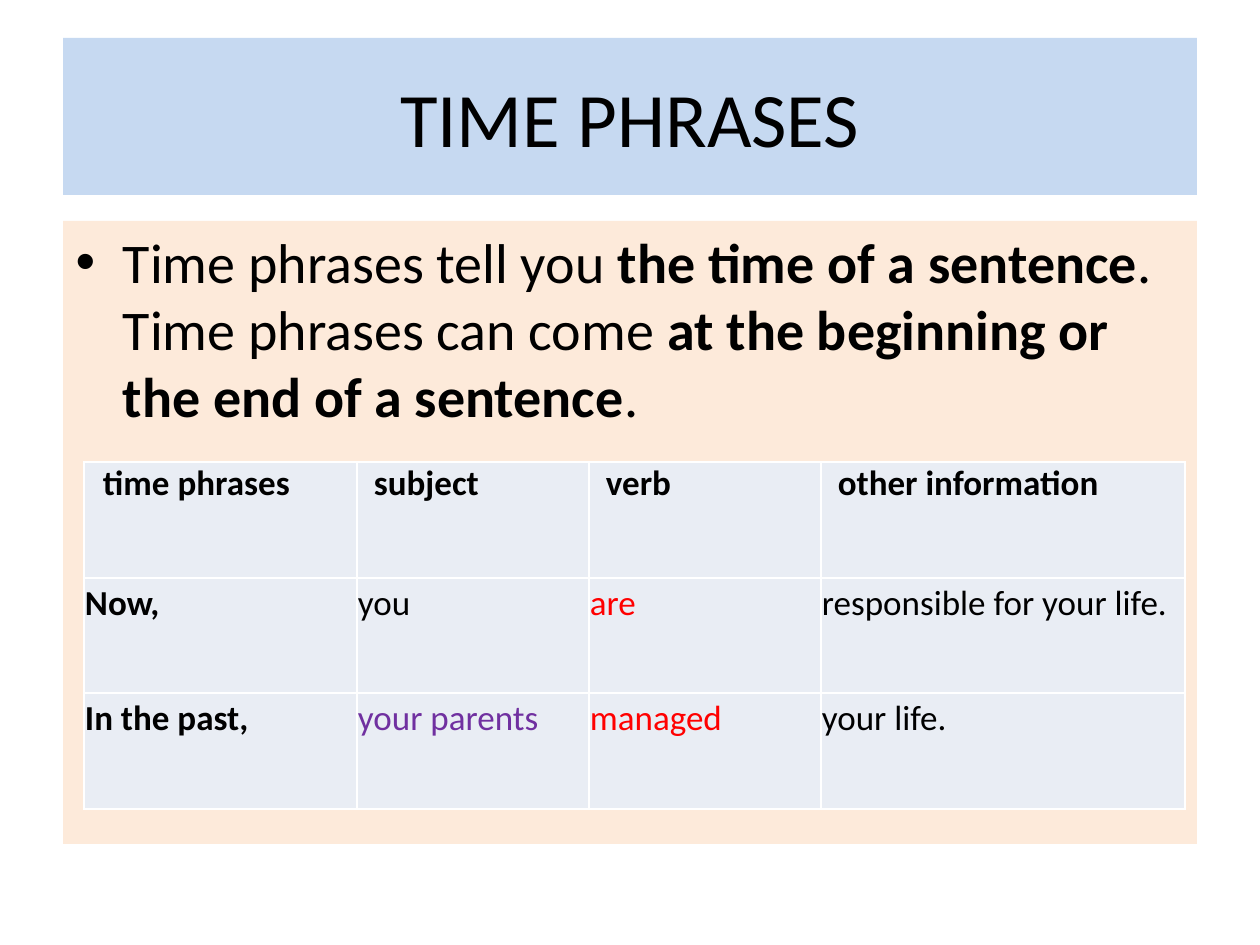
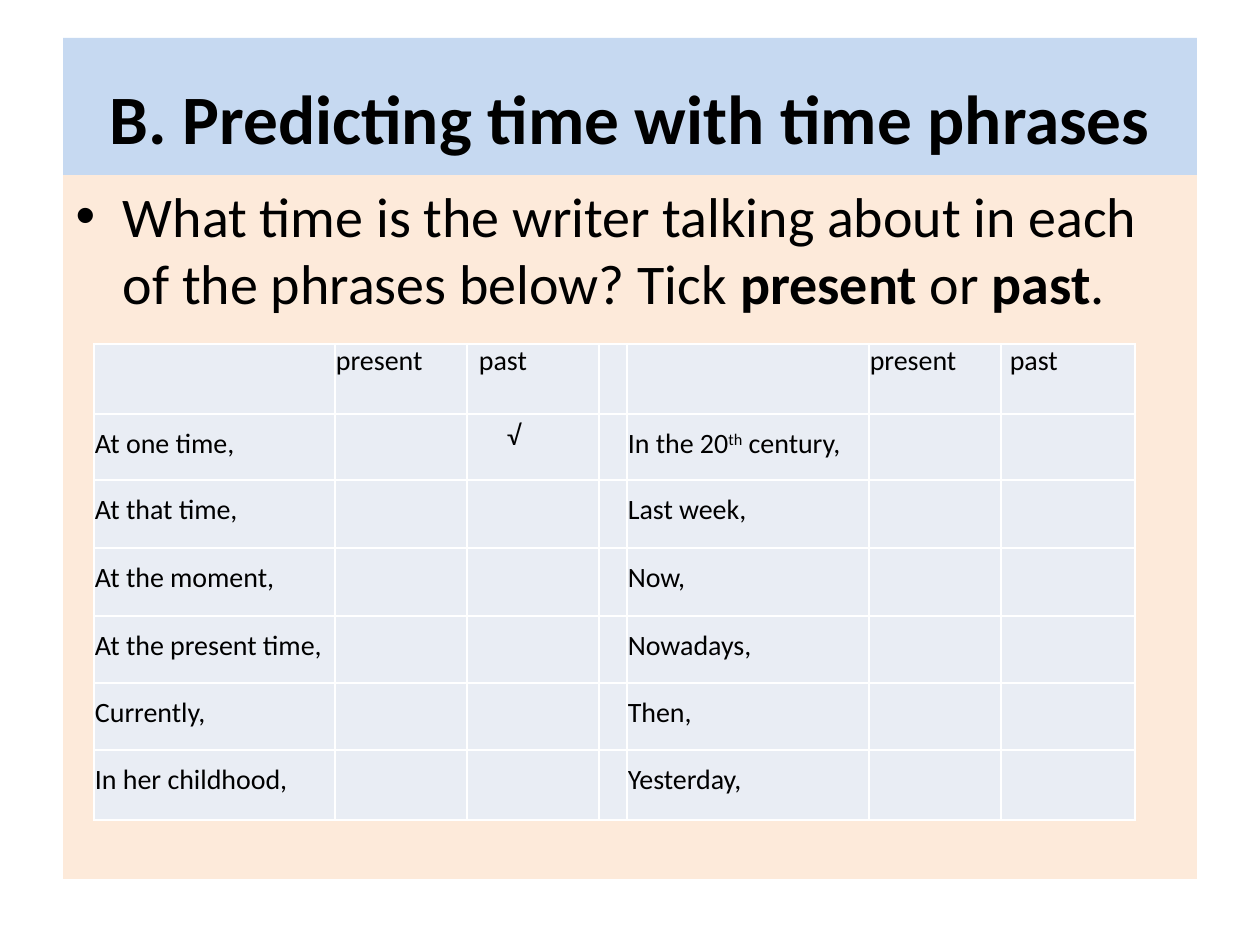
from lxml.etree import SubElement
from pptx import Presentation
from pptx.dml.color import RGBColor as Rgb
from pptx.enum.text import MSO_ANCHOR as Anchor, PP_ALIGN as Align
from pptx.oxml.ns import qn
from pptx.util import Emu, Pt

# Shared look
COLORS = {"title": "C6D9F1", "body": "FDEADA", "cell": "E9EDF4", "line": "FFFFFF",
          "text": "000000", "verb": "FF0000", "person": "7030A0"}
FONT = "Calibri"
SCALE = 914400 / 126  # EMU in one px
TITLE_AREA = (63, 38, 1134, 157)
CELL_INSET = 1
PHRASE_TOP = 26   # drop of the phrases below the top of their row
PHRASE_LINE = 12.1

# Content: a text is a list of (words, style) spans
BOLD, PLAIN, VERB, PERSON, RAISED = "bold", "plain", "verb", "person", "raised"


def plain(*texts):
    return [[(text, PLAIN)] if text else [] for text in texts]


PHRASE_PAIRS = [
    ("At one time,", [("In the 20", PLAIN), ("th", RAISED), (" century,", PLAIN)]),
    ("At that time,", [("Last week,", PLAIN)]),
    ("At the moment,", [("Now,", PLAIN)]),
    ("At the present time,", [("Nowadays,", PLAIN)]),
    ("Currently,", [("Then,", PLAIN)]),
    ("In her childhood,", [("Yesterday,", PLAIN)]),
]
TICK = "√"
TICKED_PHRASE = "At one time,"

SLIDES = [
    {
        "title": [("TIME PHRASES", PLAIN)], "title_size": 44,
        "body_area": (63, 221, 1134, 623),
        "body": [("Time phrases tell you ", PLAIN), ("the time of a sentence", BOLD),
                 (". Time phrases can come ", PLAIN),
                 ("at the beginning or the end of a sentence", BOLD), (".", PLAIN)],
        "table": {
            "corner": (84, 462), "size": 20,
            "columns": [273, 232, 232, 364], "heights": [116, 115, 116],
            "header_indents": [18, 16, 16, 16],
            "rows": [
                [[(name, BOLD)] for name in
                 ("time phrases", "subject", "verb", "other information")],
                [[("Now,", BOLD)], [("you", PLAIN)], [("are", VERB)],
                 [("responsible for your life.", PLAIN)]],
                [[("In the past,", BOLD)], [("your parents", PERSON)],
                 [("managed", VERB)], [("your life.", PLAIN)]],
            ],
        },
    },
    {
        "title": [("B. Predicting time with time phrases", BOLD)], "title_size": 39.6,
        "body_area": (63, 175, 1134, 704),
        "body": [("What time is the writer talking about in each of the phrases "
                  "below? Tick ", PLAIN), ("present", BOLD), (" or ", PLAIN),
                 ("past", BOLD), (".", PLAIN)],
        "table": {
            "corner": (94, 344), "size": 16,
            "columns": [241, 132, 132, 28, 242, 132, 134],
            "heights": [70, 66, 68, 68, 67, 67, 70],
            "header_indents": [0, 0, 11, 0, 0, 0, 8],
            "rows": [plain("", "present", "past", "", "", "present", "past")] + [
                plain(left, "", TICK if left == TICKED_PHRASE else "", "")
                + [right] + plain("", "")
                for left, right in PHRASE_PAIRS
            ],
        },
    },
]


def px(length):
    return Emu(round(length * SCALE))


def paint(target, color):
    target.fill.solid()
    target.fill.fore_color.rgb = Rgb.from_string(COLORS[color])


def write(para, spans, size):
    for text, style in spans:
        span = para.add_run()
        span.text = text
        font = span.font
        font.name, font.size, font.bold = FONT, Pt(size), style == BOLD
        color = style if style in COLORS else "text"
        font.color.rgb = Rgb.from_string(COLORS[color])
        if style == RAISED:
            span._r.get_or_add_rPr().set("baseline", "30000")


def fill_placeholder(box, area, color, spans, size):
    box.left, box.top, box.width, box.height = map(px, area)
    paint(box, color)
    write(box.text_frame.paragraphs[0], spans, size)


def draw_borders(cell):
    properties = cell._tc.get_or_add_tcPr()
    for index, side in enumerate(("lnL", "lnR", "lnT", "lnB")):
        line = SubElement(properties, qn(f"a:{side}"), w=str(Pt(1)))
        properties.insert(index, line)  # borders come before the fill
        solid = SubElement(line, qn("a:solidFill"))
        SubElement(solid, qn("a:srgbClr"), val=COLORS["line"])


def fill_cell(cell, spans, size, is_header, indent):
    paint(cell, "cell")
    draw_borders(cell)
    cell.margin_top = cell.margin_bottom = 0
    cell.margin_left, cell.margin_right = px(CELL_INSET + indent), px(CELL_INSET)
    para = cell.text_frame.paragraphs[0]
    if not spans:
        return
    write(para, spans, size)
    if spans[0][0] == TICK:
        cell.margin_left = px(40)
        para.line_spacing = 1.15
    elif not is_header:
        cell.margin_top = px(PHRASE_TOP)
        para.line_spacing = Pt(PHRASE_LINE)


def add_grid(page, grid):
    columns, heights, rows = grid["columns"], grid["heights"], grid["rows"]
    area = (*grid["corner"], sum(columns), sum(heights))
    table = page.shapes.add_table(len(rows), len(columns), *map(px, area)).table
    table.first_row = table.horz_banding = False
    for column, width in zip(table.columns, columns):
        column.width = px(width)
    for row_index, (row, height) in enumerate(zip(rows, heights)):
        table.rows[row_index].height = px(height)
        for column_index, spans in enumerate(row):
            is_header = row_index == 0
            indent = grid["header_indents"][column_index] if is_header else 0
            fill_cell(table.cell(row_index, column_index), spans, grid["size"],
                      is_header, indent)


def add_page(deck, content):
    page = deck.slides.add_slide(deck.slide_layouts[1])
    title, body = page.placeholders
    fill_placeholder(title, TITLE_AREA, "title", content["title"], content["title_size"])
    title.text_frame.vertical_anchor = Anchor.MIDDLE
    title.text_frame.paragraphs[0].alignment = Align.CENTER
    fill_placeholder(body, content["body_area"], "body", content["body"], 32)
    add_grid(page, content["table"])


def main():
    deck = Presentation()
    deck.slide_width, deck.slide_height = px(1260), px(945)
    for content in SLIDES:
        add_page(deck, content)
    deck.save("out.pptx")


if __name__ == "__main__":
    main()
